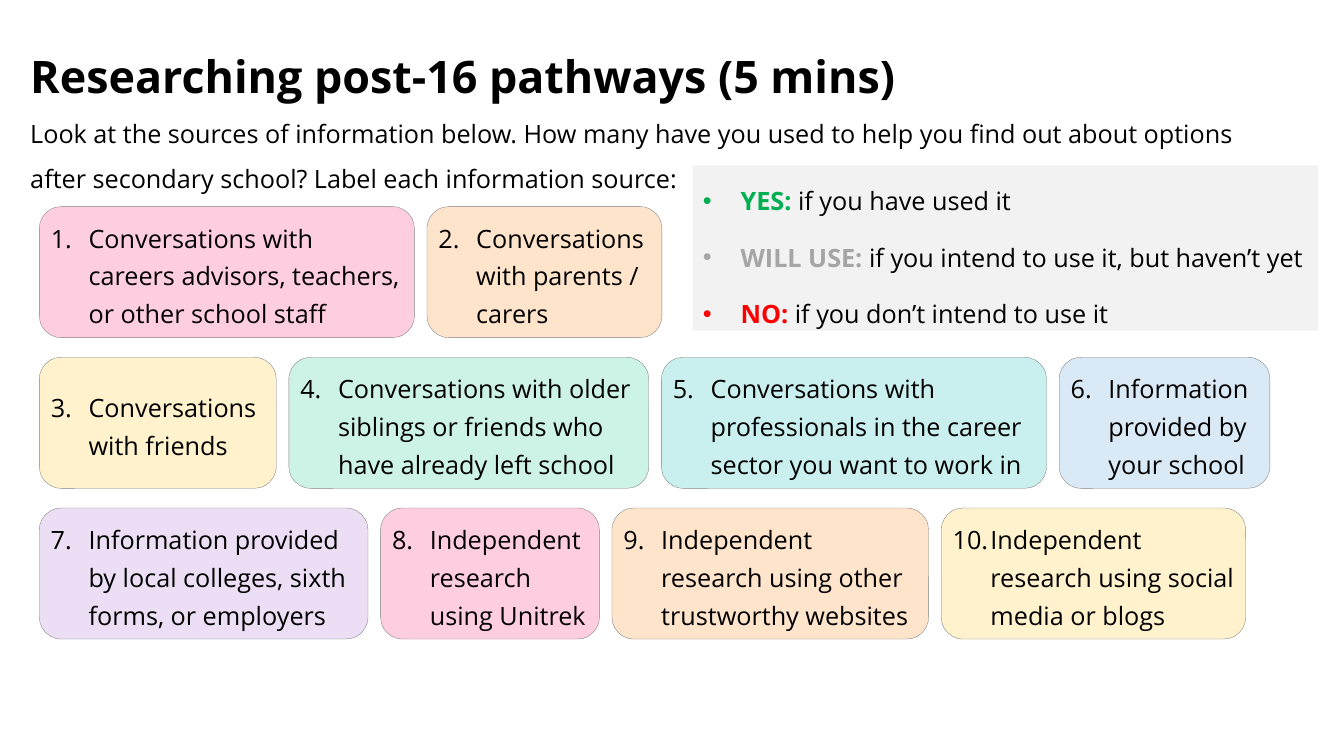
import pptx
import pptx.util
import pptx.dml.color
import pptx.enum.shapes
import pptx.enum.text
import lxml.etree

INK = {"black": "000000", "edge": "808080", "panel": "F2F2F2",
       "yes": "00B050", "will": "A5A5A5", "no": "FF0000",
       "pink": "FFCDE0", "peach": "FFE4CC", "cream": "FFF2CC",
       "mint": "CDF3E6", "aqua": "C9F0EF", "sky": "DAE9F6",
       "lilac": "ECDFF5"}
FACE = "Open Sans"
HEAD = "Researching post-16 pathways (5 mins)"
INTRO = ("Look at the sources of information below. How many have you used "
         "to help you find out about options after secondary school? "
         "Label each information source:")
KEY = [("YES: ", "if you have used it", "yes"),
       ("WILL USE: ", "if you intend to use it, but haven’t yet", "will"),
       ("NO: ", "if you don’t intend to use it", "no")]
ROWS = [
    [("Conversations with careers advisors, teachers, or other school staff", 3.72, "pink"),
     ("Conversations with parents / carers", 2.33, "peach")],
    [("Conversations with friends", 2.35, "cream"),
     ("Conversations with older siblings or friends who have already left school", 3.57, "mint"),
     ("Conversations with professionals in the career sector you want to work in", 3.82, "aqua"),
     ("Information provided by your school", 2.09, "sky")],
    [("Information provided by local colleges, sixth forms, or employers", 3.26, "lilac"),
     ("Independent research using Unitrek", 2.17, "pink"),
     ("Independent research using other trustworthy websites", 3.14, "peach"),
     ("Independent research using social media or blogs", 3.02, "cream")],
]
LEFT, TOP, GAP, TALL, STEP = 0.39, 2.05, 0.125, 1.3, 1.495
INCH = pptx.util.Inches
ANCHOR = pptx.enum.text.MSO_ANCHOR


def tint(name):
    return pptx.dml.color.RGBColor.from_string(INK[name])


def place(shape, *box):
    shape.left, shape.top, shape.width, shape.height = map(INCH, box)


def mark(para, tag, indent=0, **attrs):
    props = para._p.get_or_add_pPr()
    props.set("marL", str(INCH(indent)))
    props.set("indent", str(-INCH(indent)))
    bullet = lxml.etree.SubElement(props, pptx.oxml.ns.qn("a:" + tag))
    for name, value in attrs.items():
        bullet.set(name, str(value))


def style(para, space, after, size=18, bold=False):
    para.alignment = pptx.enum.text.PP_ALIGN.LEFT
    para.line_spacing = space
    para.space_before = pptx.util.Pt(0)
    para.space_after = pptx.util.Pt(after)
    font = para.font
    font.name, font.size, font.bold = FACE, pptx.util.Pt(size), bold
    font.color.rgb = tint("black")


def setup(shape, anchor):
    frame = shape.text_frame
    frame.word_wrap = True
    frame.auto_size = pptx.enum.text.MSO_AUTO_SIZE.NONE
    frame.vertical_anchor = anchor
    return frame


def card(slide, num, text, color, *box):
    shape = slide.shapes.add_shape(
        pptx.enum.shapes.MSO_SHAPE.ROUNDED_RECTANGLE, *map(INCH, box))
    shape.shadow.inherit = False
    shape.fill.solid()
    shape.fill.fore_color.rgb = tint(color)
    shape.line.color.rgb = tint("edge")
    shape.line.width = pptx.util.Pt(0.25)
    frame = setup(shape, ANCHOR.MIDDLE)
    frame.margin_left = frame.margin_right = INCH(0.05)
    frame.margin_top = frame.margin_bottom = INCH(0.05)
    para = frame.paragraphs[0]
    para.text = text
    mark(para, "buAutoNum", 0.375, type="arabicPeriod", startAt=num)
    style(para, 1.25, 30)


def main():
    deck = pptx.Presentation()
    deck.slide_width, deck.slide_height = INCH(13.33), INCH(7.5)
    slide = deck.slides.add_slide(deck.slide_layouts[3])
    title, intro, key = list(slide.placeholders)[:3]

    place(title, 0.2, 0.37, 12.49, 0.73)
    title.text = HEAD
    frame = setup(title, ANCHOR.MIDDLE)
    style(frame.paragraphs[0], 1.07, 8, 32, True)

    place(intro, 0.2, 0.97, 12.69, 2.14)
    intro.text = INTRO
    para = setup(intro, ANCHOR.TOP).paragraphs[0]
    mark(para, "buNone")
    style(para, 1.5, 8)

    place(key, 6.87, 1.64, 6.2, 1.64)
    key.fill.solid()
    key.fill.fore_color.rgb = tint("panel")
    frame = setup(key, ANCHOR.TOP)
    for i, (label, text, color) in enumerate(KEY):
        para = frame.add_paragraph() if i else frame.paragraphs[0]
        mark(para, "buChar", 0.375, char="•")
        style(para, 1.5, 8)
        run = para.add_run()
        run.text = label
        run.font.bold = True
        run.font.color.rgb = tint(color)
        para.add_run().text = text

    num = 1
    for r, row in enumerate(ROWS):
        left = LEFT
        for text, wide, color in row:
            card(slide, num, text, color, left, TOP + r * STEP, wide, TALL)
            left += wide + GAP
            num += 1
    deck.save("out.pptx")


if __name__ == "__main__":
    main()
